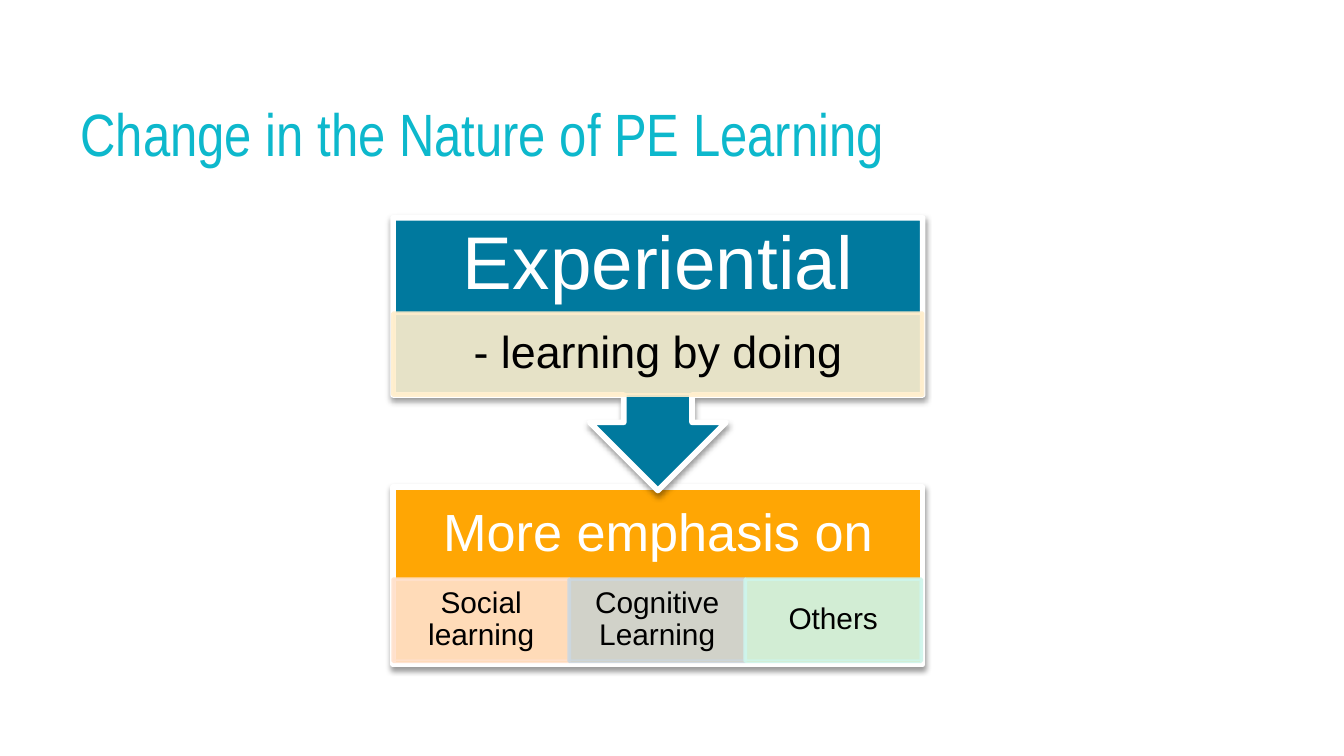
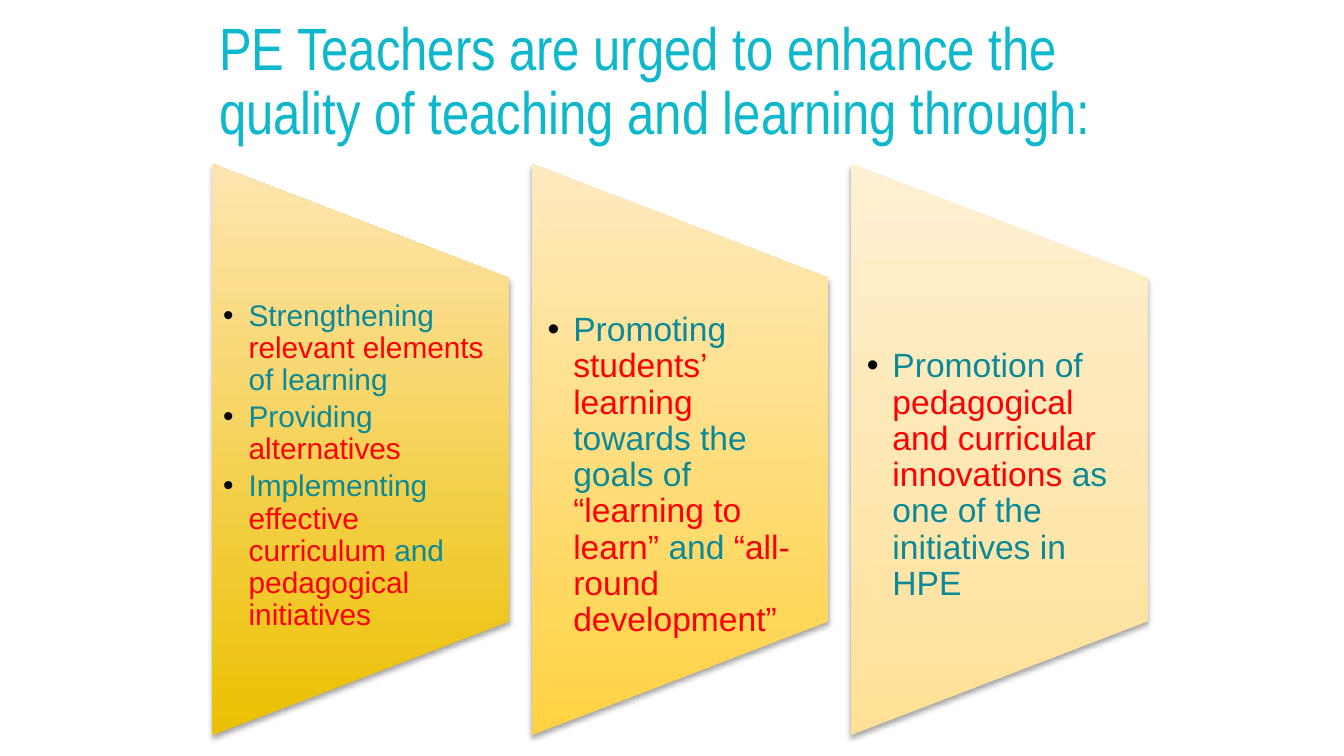
from dataclasses import dataclass
from itertools import cycle

from lxml.etree import SubElement
from pptx import Presentation
from pptx.dml.color import RGBColor
from pptx.enum.shapes import MSO_SHAPE
from pptx.enum.text import MSO_ANCHOR, MSO_AUTO_SIZE, PP_ALIGN
from pptx.oxml.ns import qn
from pptx.shapes.autoshape import Shape
from pptx.slide import Slide
from pptx.text.text import TextFrame
from pptx.util import Pt

EMU_PER_PX = 4572
SLIDE_WIDTH = 2000
SLIDE_HEIGHT = 1125
WHITE = RGBColor(0xFF, 0xFF, 0xFF)
BLACK = RGBColor(0x00, 0x00, 0x00)
CYAN = RGBColor(0x0D, 0xB8, 0xCC)
TEAL = RGBColor(0x0A, 0x8A, 0x99)
RED = RGBColor(0xFF, 0x00, 0x00)
BLUE = RGBColor(0x00, 0x79, 0x9E)
ORANGE = RGBColor(0xFF, 0xA6, 0x04)
CREAM = RGBColor(0xFF, 0xEE, 0xCC)
PEACH = RGBColor(0xFF, 0xE1, 0xCC)
GREY_BLUE = RGBColor(0xCC, 0xD7, 0xDF)
MINT = RGBColor(0xCE, 0xF5, 0xEB)


def px(length: int) -> int:
    return length * EMU_PER_PX


@dataclass(frozen=True)
class Box:
    left: int
    top: int
    width: int
    height: int

    def emu(self) -> tuple[int, int, int, int]:
        return px(self.left), px(self.top), px(self.width), px(self.height)


@dataclass(frozen=True)
class Cell:
    label: str
    color: RGBColor


@dataclass(frozen=True)
class Stage:
    heading: str
    heading_size: int
    outline: MSO_SHAPE
    rotation: int
    color: RGBColor
    top: int
    height: int
    cells_top: int
    cell_size: int
    cells: tuple[Cell, ...]


@dataclass(frozen=True)
class Column:
    dark: RGBColor
    light: RGBColor
    size: int
    side_inset: int
    top_inset: int
    points: tuple[tuple[str, ...], ...]


STAGE_LEFT = 585
STAGE_WIDTH = 788
HEADING_HEIGHT = 142
CELL_HEIGHT = 122
STAGES = (
    Stage("More emphasis on", 28, MSO_SHAPE.RECTANGLE, 0, ORANGE, 725, 264, 862, 16,
          (Cell("Social learning", PEACH), Cell("Cognitive Learning", GREY_BLUE),
           Cell("Others", MINT))),
    Stage("Experiential", 40, MSO_SHAPE.UP_ARROW_CALLOUT, 180, BLUE, 324, 406, 466, 24,
          (Cell("- learning by doing", CREAM),)),
)

COLUMN_LEFT = 316
COLUMN_WIDTH = 442
COLUMN_HEIGHT = 850
COLUMN_STEP = 475
COLUMNS = (
    Column(RGBColor(0xEB, 0xC0, 0x00), RGBColor(0xFF, 0xE5, 0xB1), 16, 16, 50, (
        ("Strengthening ", "relevant elements ", "of learning"),
        ("Providing ", "alternatives"),
        ("Implementing ", "effective curriculum ", "and ", "pedagogical initiatives"),
    )),
    Column(RGBColor(0xFF, 0xD2, 0x41), RGBColor(0xFF, 0xEA, 0xC0), 18, 24, 78, (
        ("Promoting ", "students’ learning ", "towards the goals of ",
         "“learning to learn” ", "and ", "“all-round development”"),
    )),
    Column(RGBColor(0xFF, 0xE0, 0x96), RGBColor(0xFF, 0xF0, 0xD3), 18, 24, 78, (
        ("Promotion of ", "pedagogical and curricular innovations ",
         "as one of the initiatives in HPE"),
    )),
)


def write_text(frame: TextFrame, paragraphs: tuple[tuple[str, ...], ...], *, size: int,
               colors: tuple[RGBColor, ...], font: str = "Arial",
               align: PP_ALIGN = PP_ALIGN.LEFT,
               anchor: MSO_ANCHOR = MSO_ANCHOR.MIDDLE, side_inset: int = 0,
               top_inset: int = 0, bulleted: bool = False) -> None:
    frame.word_wrap = True
    frame.auto_size = MSO_AUTO_SIZE.NONE
    frame.vertical_anchor = anchor
    frame.margin_left = frame.margin_right = px(side_inset)
    frame.margin_top = px(top_inset)
    frame.margin_bottom = 0
    for index, spans in enumerate(paragraphs):
        paragraph = frame.add_paragraph() if index else frame.paragraphs[0]
        if bulleted:
            add_bullet(paragraph._p.get_or_add_pPr())
            paragraph.space_after = Pt(2.5)
        paragraph.alignment = align
        paragraph.line_spacing = 0.9
        for words, color in zip(spans, cycle(colors)):
            run = paragraph.add_run()
            run.text = words
            run.font.name = font
            run.font.size = Pt(size)
            run.font.color.rgb = color


def add_bullet(properties) -> None:
    properties.set("marL", str(px(38)))
    properties.set("indent", str(px(-38)))
    bullet_color = SubElement(properties, qn("a:buClr"))
    SubElement(bullet_color, qn("a:srgbClr"), val=str(BLACK))
    SubElement(properties, qn("a:buFont"), typeface="Arial")
    SubElement(properties, qn("a:buChar"), char="•")


def add_form(slide: Slide, outline: MSO_SHAPE, box: Box, rotation: int = 0) -> Shape:
    form = slide.shapes.add_shape(outline, *box.emu())
    form.rotation = rotation
    form.shadow.inherit = False
    return form


def paint(form: Shape, fill: RGBColor, line: RGBColor, width: int) -> None:
    form.fill.solid()
    form.fill.fore_color.rgb = fill
    form.line.color.rgb = line
    form.line.width = Pt(width)


def add_shadow(form: Shape, opacity: int) -> None:
    effects = form._element.spPr.find(qn("a:effectLst"))
    shadow = SubElement(effects, qn("a:outerShdw"), blurRad=str(Pt(3.1)),
                        dist=str(Pt(1.7)), dir="5400000", rotWithShape="0")
    color = SubElement(shadow, qn("a:srgbClr"), val=str(BLACK))
    SubElement(color, qn("a:alpha"), val=str(opacity * 1000))


def set_opacity(form: Shape, opacity: int) -> None:
    for color in form._element.spPr.iter(qn("a:srgbClr")):
        SubElement(color, qn("a:alpha"), val=str(opacity * 1000))


def add_titled_slide(deck: Presentation, title: str, box: Box) -> Slide:
    slide = deck.slides.add_slide(deck.slide_layouts[5])
    heading = slide.shapes.title
    heading.left, heading.top, heading.width, heading.height = box.emu()
    write_text(heading.text_frame, ((title,),), size=32, colors=(CYAN,),
               font="Arial Narrow", anchor=MSO_ANCHOR.BOTTOM)
    return slide


def add_stage(slide: Slide, stage: Stage) -> None:
    body = add_form(slide, stage.outline,
                    Box(STAGE_LEFT, stage.top, STAGE_WIDTH, stage.height), stage.rotation)
    paint(body, stage.color, WHITE, 3)
    add_shadow(body, 38)
    heading = slide.shapes.add_textbox(
        *Box(STAGE_LEFT, stage.top, STAGE_WIDTH, HEADING_HEIGHT).emu())
    write_text(heading.text_frame, ((stage.heading,),), size=stage.heading_size,
               colors=(WHITE,), align=PP_ALIGN.CENTER)
    cell_width = STAGE_WIDTH // len(stage.cells)
    for index, cell in enumerate(stage.cells):
        tile = add_form(slide, MSO_SHAPE.RECTANGLE,
                        Box(STAGE_LEFT + index * cell_width, stage.cells_top,
                            cell_width, CELL_HEIGHT))
        paint(tile, cell.color, cell.color, 2)
        set_opacity(tile, 90)
        write_text(tile.text_frame, ((cell.label,),), size=stage.cell_size,
                   colors=(BLACK,), align=PP_ALIGN.CENTER, side_inset=24)


def add_column(slide: Slide, column: Column, left: int) -> None:
    panel = add_form(slide, MSO_SHAPE.FLOWCHART_MANUAL_OPERATION,
                     Box(left - (COLUMN_HEIGHT - COLUMN_WIDTH) // 2, 448,
                         COLUMN_HEIGHT, COLUMN_WIDTH), 270)
    panel.fill.gradient()
    panel.fill.gradient_angle = 90
    for stop, color in zip(panel.fill.gradient_stops, (column.dark, column.light)):
        stop.color.rgb = color
    panel._element.spPr.find(qn("a:gradFill")).set("rotWithShape", "0")
    panel.line.fill.background()
    add_shadow(panel, 35)
    points = slide.shapes.add_textbox(*Box(left, 414, COLUMN_WIDTH, 510).emu())
    write_text(points.text_frame, column.points, size=column.size, colors=(TEAL, RED),
               side_inset=column.side_inset, top_inset=column.top_inset, bulleted=True)


def main() -> None:
    deck = Presentation()
    deck.slide_width, deck.slide_height = px(SLIDE_WIDTH), px(SLIDE_HEIGHT)

    nature = add_titled_slide(deck, "Change in the Nature of PE Learning",
                              Box(120, 166, 1336, 86))
    for stage in STAGES:
        add_stage(nature, stage)

    quality = add_titled_slide(
        deck, "PE Teachers are urged to enhance the quality of teaching and learning through:",
        Box(326, 19, 1350, 201))
    for index, column in enumerate(COLUMNS):
        add_column(quality, column, COLUMN_LEFT + index * COLUMN_STEP)

    deck.save("out.pptx")


if __name__ == "__main__":
    main()
